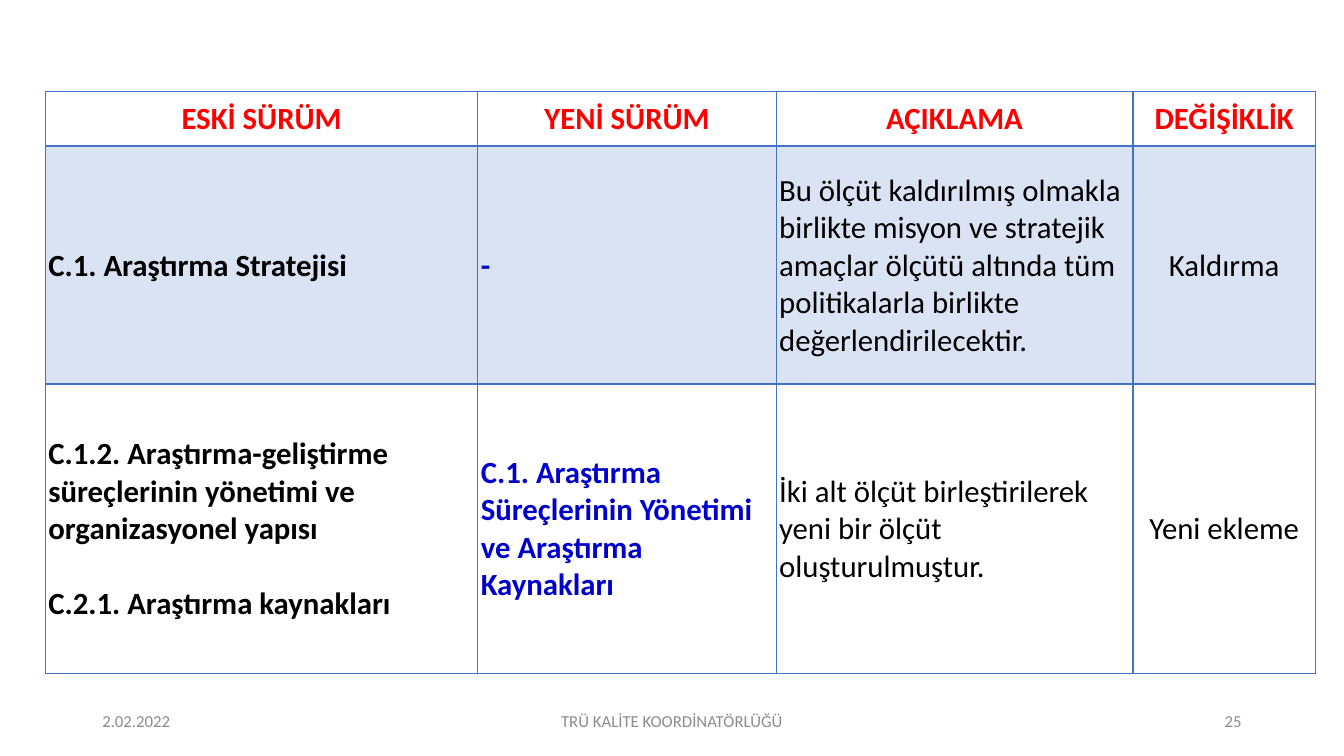
from lxml import etree
from pptx import Presentation
from pptx.dml.color import RGBColor
from pptx.enum import text
from pptx.oxml import ns
from pptx.util import Pt

RED = RGBColor(0xFF, 0x00, 0x00)
BLACK = RGBColor(0x00, 0x00, 0x00)
NAVY = RGBColor(0x00, 0x00, 0xCC)
GREY = RGBColor(0x8C, 0x8C, 0x8C)
BORDER = RGBColor(0x44, 0x72, 0xC4)
PALE_BLUE = RGBColor(0xDA, 0xE3, 0xF3)
LEFT, CENTER, RIGHT = text.PP_ALIGN.LEFT, text.PP_ALIGN.CENTER, text.PP_ALIGN.RIGHT

# Content: each table cell is a list of paragraphs
ROWS = [
    [["ESKİ SÜRÜM"], ["YENİ SÜRÜM"], ["AÇIKLAMA"], ["DEĞİŞİKLİK"]],
    [["C.1. Araştırma Stratejisi"], ["-"],
     ["Bu ölçüt kaldırılmış olmakla birlikte misyon ve stratejik amaçlar ölçütü "
      "altında tüm politikalarla birlikte değerlendirilecektir."],
     ["Kaldırma"]],
    [["C.1.2. Araştırma-geliştirme süreçlerinin yönetimi ve organizasyonel yapısı",
      "C.2.1. Araştırma kaynakları"],
     ["C.1. Araştırma Süreçlerinin Yönetimi ve Araştırma Kaynakları"],
     ["İki alt ölçüt birleştirilerek yeni bir ölçüt oluşturulmuştur."],
     ["Yeni ekleme"]],
]
FOOTERS = [  # wording, left, width, alignment
    ("2.02.2022", 66, 216, LEFT),
    ("TRÜ KALİTE KOORDİNATÖRLÜĞÜ", 318, 324, CENTER),
    ("25", 678, 216, RIGHT),
]

# Layout and formats
TABLE_LEFT, TABLE_TOP = 32.4, 65.5
COLUMN_WIDTHS = [308.9, 213.1, 254.9, 130.3]
ROW_HEIGHTS = [38.9, 169.9, 206.6]
FOOTER_TOP, FOOTER_HEIGHT = 500.5, 28.8
PARAGRAPH_GAP = 26.8
THIN, THICK = 1, 2

HEADER_FORMAT = {"color": RED, "bold": True, "align": CENTER}
COLUMN_FORMATS = [
    {"color": BLACK, "bold": True, "align": LEFT},
    {"color": NAVY, "bold": True, "align": LEFT},
    {"color": BLACK, "bold": False, "align": LEFT},
    {"color": BLACK, "bold": False, "align": CENTER},
]
CELL_FORMAT = {"margin_left": Pt(2.2), "margin_right": Pt(2.2), "margin_top": Pt(0.7),
               "margin_bottom": Pt(0), "vertical_anchor": text.MSO_ANCHOR.MIDDLE}


def set_attributes(target, values):
    for name, value in values.items():
        setattr(target, name, value)


def write_text(frame, lines, size, color, bold, align):
    for index, line in enumerate(lines):
        paragraph = frame.add_paragraph() if index else frame.paragraphs[0]
        paragraph.alignment = align
        if index:
            paragraph.space_before = Pt(PARAGRAPH_GAP)
        run = paragraph.add_run()
        run.text = line
        set_attributes(run.font, {"name": "Calibri", "size": Pt(size), "bold": bold})
        run.font.color.rgb = color


def add_borders(cell, widths):
    properties = cell._tc.get_or_add_tcPr()
    for side, width in widths.items():
        line = etree.SubElement(properties, ns.qn("a:ln" + side), w=str(Pt(width)))
        fill = etree.SubElement(line, ns.qn("a:solidFill"))
        etree.SubElement(fill, ns.qn("a:srgbClr"), val=str(BORDER))


def add_version_table(slide):
    table = slide.shapes.add_table(
        len(ROWS), len(COLUMN_WIDTHS), Pt(TABLE_LEFT), Pt(TABLE_TOP),
        Pt(sum(COLUMN_WIDTHS)), Pt(sum(ROW_HEIGHTS))).table
    table.horz_banding = False
    for column, width in zip(table.columns, COLUMN_WIDTHS):
        column.width = Pt(width)
    for row, height in zip(table.rows, ROW_HEIGHTS):
        row.height = Pt(height)

    for row_index, row in enumerate(ROWS):
        for column_index, lines in enumerate(row):
            cell = table.cell(row_index, column_index)
            set_attributes(cell, CELL_FORMAT)
            # The rule under the header is shared by the first two rows
            add_borders(cell, {"L": THIN, "R": THIN,
                               "T": THICK if row_index == 1 else THIN,
                               "B": THICK if row_index == 0 else THIN})
            if row_index == 1:
                cell.fill.solid()
                cell.fill.fore_color.rgb = PALE_BLUE
            else:
                cell.fill.background()
            style = COLUMN_FORMATS[column_index] if row_index else HEADER_FORMAT
            write_text(cell.text_frame, lines, 22, **style)


def add_footers(slide):
    for wording, left, width, align in FOOTERS:
        box = slide.shapes.add_textbox(Pt(left), Pt(FOOTER_TOP), Pt(width), Pt(FOOTER_HEIGHT))
        set_attributes(box.text_frame, {"word_wrap": True,
                                        "vertical_anchor": text.MSO_ANCHOR.MIDDLE})
        write_text(box.text_frame, [wording], 12, GREY, False, align)


def main():
    presentation = Presentation()
    presentation.slide_width, presentation.slide_height = Pt(960), Pt(540)
    slide = presentation.slides.add_slide(presentation.slide_layouts[6])
    add_version_table(slide)
    add_footers(slide)
    presentation.save("out.pptx")


if __name__ == "__main__":
    main()
